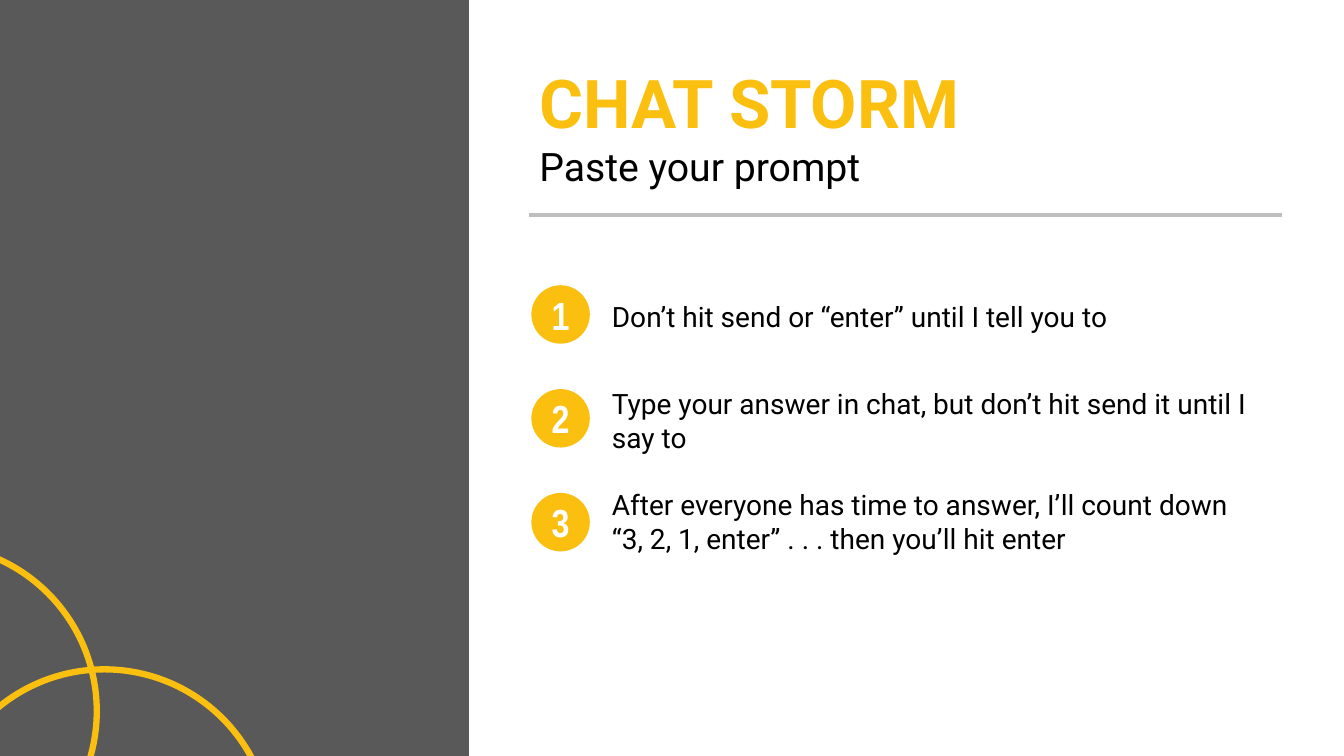
from dataclasses import dataclass

from lxml.etree import SubElement
from pptx import Presentation
from pptx.dml.color import RGBColor
from pptx.enum.shapes import MSO_CONNECTOR, MSO_SHAPE
from pptx.enum.text import MSO_ANCHOR, MSO_AUTO_SIZE, PP_ALIGN
from pptx.oxml.ns import qn
from pptx.util import Emu, Pt

PX = 9144
GOLD, GREY, SILVER = "FBBF10", "595959", "BFBFBF"
BLACK, WHITE = "000000", "FFFFFF"
HEAD = {"name": "Roboto", "size": Pt(48), "bold": True}
PROMPT = {"name": "Roboto", "size": Pt(28), "bold": False}
BODY = {"name": "Roboto", "size": Pt(20)}
DIGIT = {"name": "Arial Narrow", "size": Pt(28), "bold": True}
FIRST, PITCH, DISC = 283, 103, 58


@dataclass
class Step:
    text: str
    top: int
    height: int


@dataclass
class Ring:
    left: int
    top: int
    size: int = 331


STEPS = [
    Step("Don’t hit send or “enter” until I tell you to", 292, 44),
    Step("Type your answer in chat, but don’t hit send it until I say to", 379, 77),
    Step("After everyone has time to answer, I’ll count down “3, 2, 1, enter” . . . then you’ll hit enter", 479, 77),
]
RINGS = [Ring(-235, 540), Ring(-62, 664)]


def px(*values: int) -> list[Emu]:
    return [Emu(value * PX) for value in values]


def color(code: str) -> RGBColor:
    return RGBColor.from_string(code)


def style(part, text: str, form: dict, code: str, align=PP_ALIGN.LEFT) -> None:
    part.alignment = align
    run = part.add_run()
    run.text = text
    for key, value in form.items():
        setattr(run.font, key, value)
    run.font.color.rgb = color(code)


def shape(slide, kind, box: tuple, fill: str = "", line: str = ""):
    item = slide.shapes.add_shape(kind, *px(*box))
    item.shadow.inherit = False
    if fill:
        item.fill.solid()
        item.fill.fore_color.rgb = color(fill)
    else:
        item.fill.background()
    if line:
        item.line.color.rgb = color(line)
        item.line.width = Pt(4.5)
    else:
        item.line.fill.background()
    return item


def title(slide) -> None:
    item = slide.shapes.title
    item.left, item.top, item.width, item.height = px(525, 56, 743, 138)
    frame = item.text_frame
    frame.auto_size = MSO_AUTO_SIZE.NONE
    frame.word_wrap = True
    frame.vertical_anchor = MSO_ANCHOR.TOP
    style(frame.paragraphs[0], "CHAT STORM", HEAD, GOLD)
    style(frame.add_paragraph(), "Paste your prompt", PROMPT, BLACK)


def rule(slide) -> None:
    line = slide.shapes.add_connector(MSO_CONNECTOR.STRAIGHT, *px(525, 213, 1272, 213))
    line.line.color.rgb = color(SILVER)
    line.line.width = Pt(3)
    SubElement(line._element.spPr, qn("a:effectLst"))


def draw(slide, index: int, step: Step) -> None:
    label = slide.shapes.add_textbox(*px(597, step.top, 651, step.height))
    label.text_frame.word_wrap = True
    style(label.text_frame.paragraphs[0], step.text, BODY, BLACK)

    disc = shape(slide, MSO_SHAPE.OVAL, (527, FIRST + index * PITCH, DISC, DISC), GOLD)
    frame = disc.text_frame
    for side in ("left", "right", "top", "bottom"):
        setattr(frame, f"margin_{side}", 0)
    frame.word_wrap = False
    frame.vertical_anchor = MSO_ANCHOR.MIDDLE
    style(frame.paragraphs[0], str(index + 1), DIGIT, WHITE, PP_ALIGN.CENTER)


def main() -> None:
    deck = Presentation()
    deck.slide_width, deck.slide_height = px(1333, 750)
    slide = deck.slides.add_slide(deck.slide_layouts[5])
    shape(slide, MSO_SHAPE.RECTANGLE, (0, 0, 465, 750), GREY)
    title(slide)
    for ring in RINGS:
        shape(slide, MSO_SHAPE.OVAL, (ring.left, ring.top, ring.size, ring.size), line=GOLD)
    rule(slide)
    for index, step in enumerate(STEPS):
        draw(slide, index, step)
    deck.save("out.pptx")


if __name__ == "__main__":
    main()
